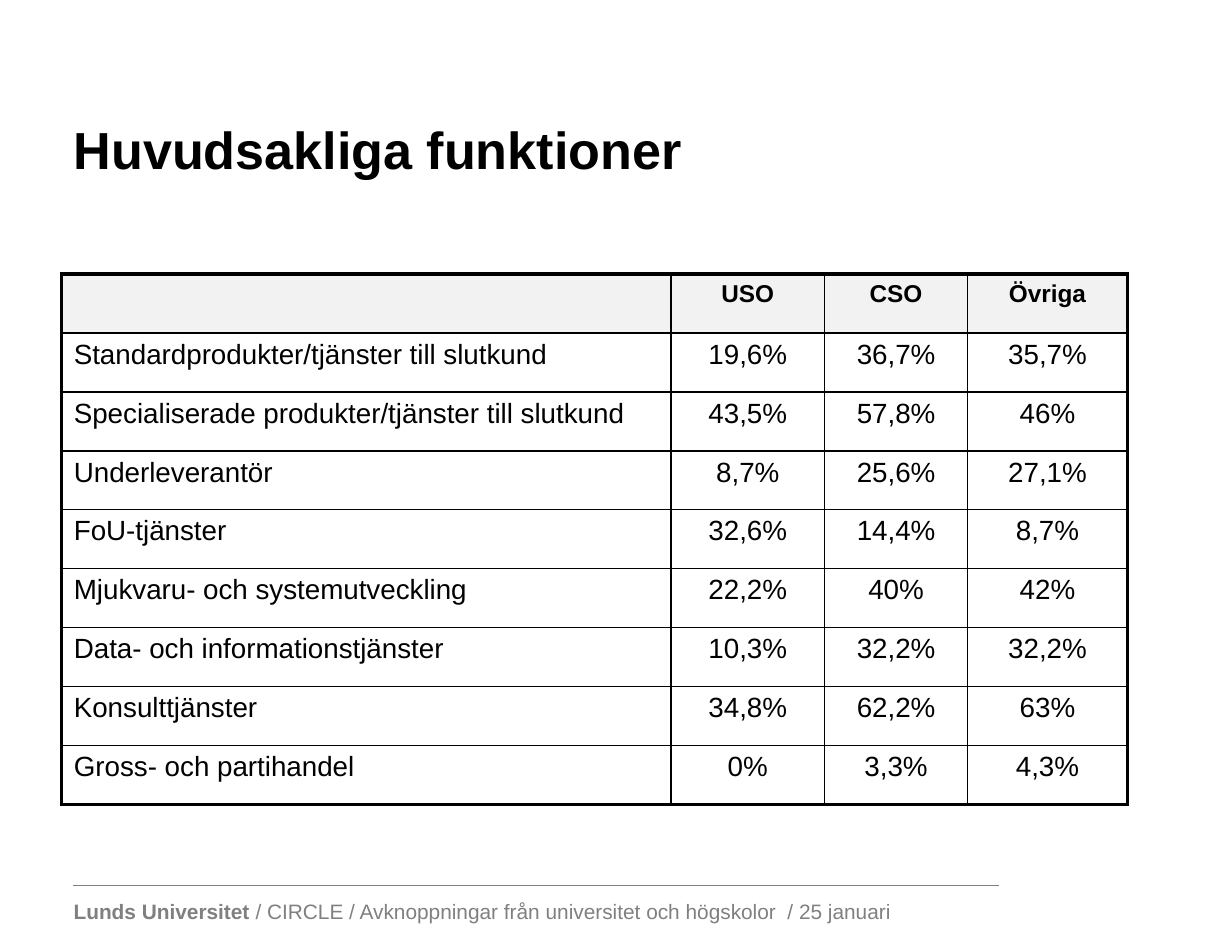
"""Build a slide with a table of main functions by type of company."""
import pptx
import pptx.util
import pptx.dml.color
import pptx.enum.shapes
import pptx.enum.text
import pptx.oxml
import pptx.oxml.ns

TITLE = "Huvudsakliga funktioner"
FOOTER = [
    ("Lunds Universitet", True),
    (" / CIRCLE / Avknoppningar från universitet och högskolor  / 25 januari", False),
]
ROWS = [
    ("", "USO", "CSO", "Övriga"),
    ("Standardprodukter/tjänster till slutkund", "19,6%", "36,7%", "35,7%"),
    ("Specialiserade produkter/tjänster till slutkund", "43,5%", "57,8%", "46%"),
    ("Underleverantör", "8,7%", "25,6%", "27,1%"),
    ("FoU-tjänster", "32,6%", "14,4%", "8,7%"),
    ("Mjukvaru- och systemutveckling", "22,2%", "40%", "42%"),
    ("Data- och informationstjänster", "10,3%", "32,2%", "32,2%"),
    ("Konsulttjänster", "34,8%", "62,2%", "63%"),
    ("Gross- och partihandel", "0%", "3,3%", "4,3%"),
]
COLORS = {"text": "000000", "header": "F2F2F2", "footer": "808080", "border": "000000"}
FONT = "Arial"
SLIDE_WIDTH, SLIDE_HEIGHT = 9001125, 6840538
LEFT = 0.49
COLUMNS = [4.87, 1.23, 1.14, 1.28]
TABLE_TOP, TABLE_HEIGHT = 2.19, 4.24
INNER, OUTER = 1, 2.25

Inches, Pt = pptx.util.Inches, pptx.util.Pt
PP_ALIGN = pptx.enum.text.PP_ALIGN


def rgb(name):
    return pptx.dml.color.RGBColor.from_string(COLORS[name])


def set_font(p, size, color, bold=None):
    p.font.name, p.font.size, p.font.bold = FONT, Pt(size), bold
    p.font.color.rgb = rgb(color)


def add_text(s, top, width, height, wrap):
    tf = s.shapes.add_textbox(*map(Inches, (LEFT, top, width, height))).text_frame
    tf.word_wrap = wrap
    return tf


def set_borders(cell, row, col):
    edges = {
        "lnL": col == 0,
        "lnR": col == len(COLUMNS) - 1,
        "lnT": row == 0,
        "lnB": row == len(ROWS) - 1,
    }
    tcPr = cell._tc.get_or_add_tcPr()
    for i, (tag, outer) in enumerate(edges.items()):
        width = Pt(OUTER if outer else INNER)
        tcPr.insert(i, pptx.oxml.parse_xml(
            f'<a:{tag} {pptx.oxml.ns.nsdecls("a")} w="{width}"><a:solidFill>'
            f'<a:srgbClr val="{COLORS["border"]}"/></a:solidFill></a:{tag}>'))


def add_table(s):
    table = s.shapes.add_table(
        len(ROWS), len(COLUMNS), Inches(LEFT), Inches(TABLE_TOP),
        Inches(sum(COLUMNS)), Inches(TABLE_HEIGHT)).table
    table.horz_banding = False
    for column, width in zip(table.columns, COLUMNS):
        column.width = Inches(width)
    for row, values in enumerate(ROWS):
        header = row == 0
        for col, value in enumerate(values):
            cell = table.cell(row, col)
            cell.text = value
            p = cell.text_frame.paragraphs[0]
            p.alignment = PP_ALIGN.CENTER if col else PP_ALIGN.LEFT
            set_font(p, 14 if header else 16, "text", header)
            if header:
                cell.fill.solid()
                cell.fill.fore_color.rgb = rgb("header")
            else:
                cell.fill.background()
            set_borders(cell, row, col)


def add_footer(s):
    line = s.shapes.add_connector(
        pptx.enum.shapes.MSO_CONNECTOR.STRAIGHT,
        *map(Inches, (0.58, 7.08, 7.98, 7.08)))
    line.line.color.rgb = rgb("footer")
    line.line.width = Pt(0.5)
    line._element.spPr.append(pptx.oxml.parse_xml(
        f'<a:effectLst {pptx.oxml.ns.nsdecls("a")}/>'))
    p = add_text(s, 7.13, 6.74, 0.3, False).paragraphs[0]
    set_font(p, 12, "footer")
    for text, bold in FOOTER:
        r = p.add_run()
        r.text, r.font.bold = text, bold


def add_title(s):
    tf = add_text(s, 0.56, 8.86, 1.25, True)
    tf.vertical_anchor = pptx.enum.text.MSO_ANCHOR.MIDDLE
    tf.text = TITLE
    set_font(tf.paragraphs[0], 30, "text", True)


def main():
    prs = pptx.Presentation()
    prs.slide_width, prs.slide_height = SLIDE_WIDTH, SLIDE_HEIGHT
    s = prs.slides.add_slide(prs.slide_layouts[6])
    add_footer(s)
    add_title(s)
    add_table(s)
    prs.save("out.pptx")


if __name__ == "__main__":
    main()
